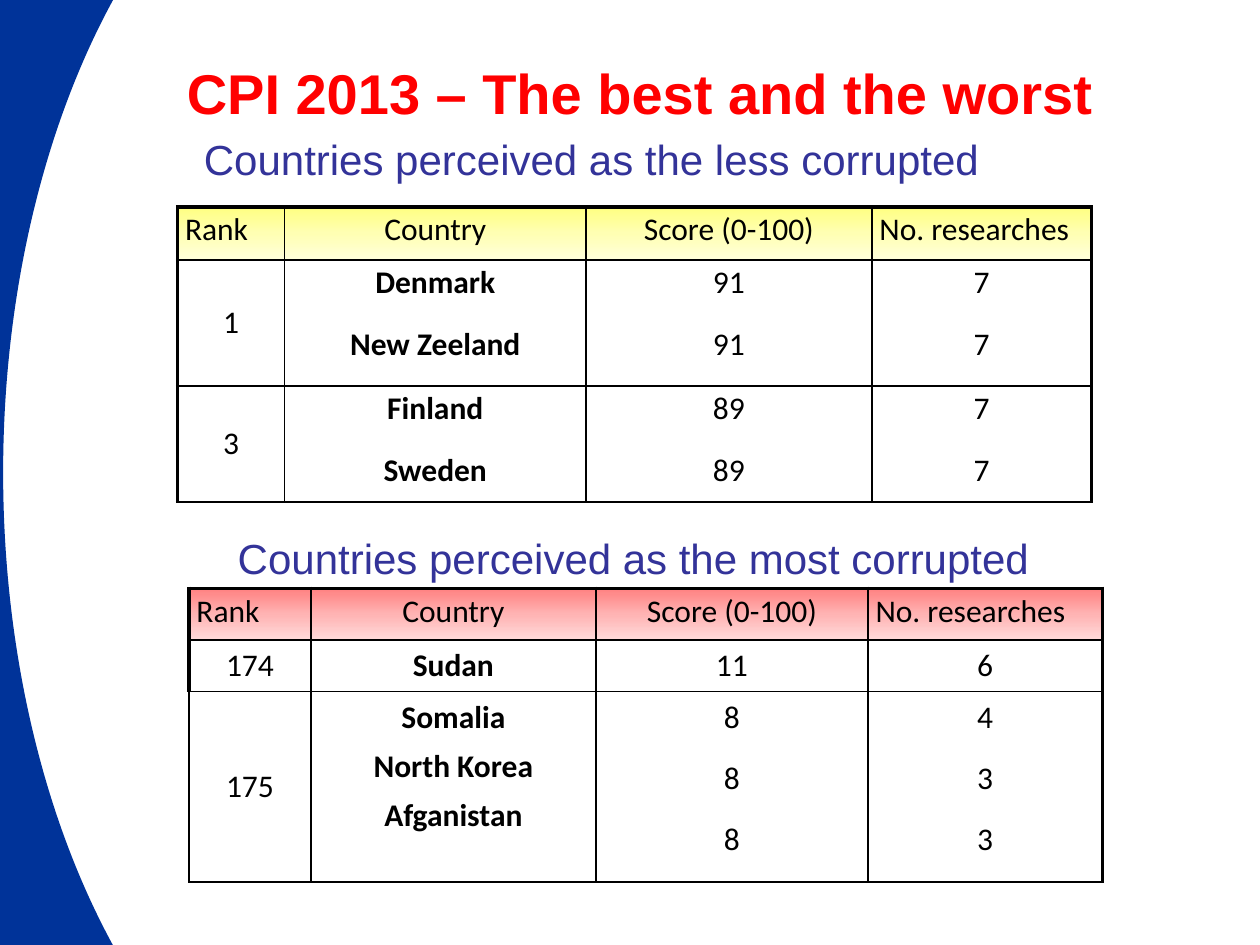
import pptx
import pptx.dml.color
import pptx.enum.shapes
import pptx.enum.text
import pptx.oxml
import pptx.oxml.ns
import pptx.util

Cm = pptx.util.Cm
Pt = pptx.util.Pt
ALIGN = pptx.enum.text.PP_ALIGN
ANCHOR = pptx.enum.text.MSO_ANCHOR
HEADINGS = ["Rank", "Country", "Score (0-100)", "No. researches"]
THIN, THICK = 1, 2.25


def color(hex_string):
    return pptx.dml.color.RGBColor.from_string(hex_string)


def write(frame, text, font="Arial", size=24, ink="333399", bold=False,
          align=ALIGN.CENTER, line=None, after=0):
    for index, words in enumerate(text.split("\n")):
        paragraph = frame.paragraphs[0] if index == 0 else frame.add_paragraph()
        paragraph.alignment = align
        paragraph.space_after = Pt(after)
        if line:
            paragraph.line_spacing = Pt(line)
        run = paragraph.add_run()
        run.text = words
        run.font.name = font
        run.font.size = Pt(size)
        run.font.bold = bold
        run.font.color.rgb = color(ink)


def add_label(slide, text, left, top, width, height, inset=0.25, **style):
    frame = slide.shapes.add_textbox(Cm(left), Cm(top), Cm(width), Cm(height)).text_frame
    frame.word_wrap = True
    frame.vertical_anchor = ANCHOR.MIDDLE
    frame.margin_left = Cm(inset)
    write(frame, text, **style)


def add_side_curve(slide):
    curve = slide.shapes.add_shape(
        pptx.enum.shapes.MSO_SHAPE.MOON, Cm(-3.39), Cm(-1.69), Cm(6.77), Cm(22.44))
    curve.adjustments[0] = 0.51
    curve.shadow.inherit = False
    curve.fill.solid()
    curve.fill.fore_color.rgb = color("003399")
    curve.line.fill.background()


def set_borders(cell, **widths):
    for side in "LRTB":
        width = int(Pt(widths.get(side, THIN)))
        cell._tc.get_or_add_tcPr().append(pptx.oxml.parse_xml(
            f'<a:ln{side} {pptx.oxml.ns.nsdecls("a")} w="{width}"><a:solidFill>'
            f'<a:srgbClr val="000000"/></a:solidFill></a:ln{side}>'))


def set_gradient(cell, shades):
    stops = "".join(f'<a:gs pos="{index * 50000}"><a:srgbClr val="{shade}"/></a:gs>'
                    for index, shade in enumerate(shades))
    cell._tc.get_or_add_tcPr().append(pptx.oxml.parse_xml(
        f'<a:gradFill {pptx.oxml.ns.nsdecls("a")}><a:gsLst>{stops}</a:gsLst>'
        '<a:lin ang="5400000" scaled="0"/></a:gradFill>'))


def set_margins(cell, wide):
    cell.margin_left = cell.margin_right = Cm(0.25 if wide else 0.15)
    cell.margin_top = cell.margin_bottom = Cm(0.13 if wide else 0.08)


def add_ranking(slide, left, top, widths, heights, body, shades,
                body_fill=None, wide_body=False, thick_left_rows=3, name_gap=13):
    rows = [HEADINGS] + body
    ranking = slide.shapes.add_table(
        len(rows), len(widths), Cm(left), Cm(top), Cm(sum(widths)), Cm(sum(heights))).table
    ranking.first_row = ranking.horz_banding = False
    for column, width in zip(ranking.columns, widths):
        column.width = Cm(width)
    for row, height in zip(ranking.rows, heights):
        row.height = Cm(height)
    last = len(widths) - 1
    for r, values in enumerate(rows):
        for c, value in enumerate(values):
            cell = ranking.cell(r, c)
            is_heading, is_country = r == 0, r > 0 and c == 1
            set_margins(cell, wide_body and not is_heading)
            set_borders(cell, L=THICK if c == 0 and r < thick_left_rows else THIN,
                        R=THICK if c == last else THIN,
                        T=THICK if is_heading else THIN)
            if is_heading:
                set_gradient(cell, shades)
            elif body_fill:
                cell.fill.solid()
                cell.fill.fore_color.rgb = color(body_fill)
            else:
                cell.fill.background()
            if c == 0 and not is_heading:
                cell.vertical_anchor = ANCHOR.MIDDLE
            write(cell.text_frame, value, font="Calibri", size=18, ink="000000",
                  bold=is_country, line=22,
                  align=ALIGN.LEFT if is_heading and c in (0, last) else ALIGN.CENTER,
                  after=name_gap if is_country and "\n" in value else 13)


def main():
    """Build the slide with the best and worst ranked countries."""
    deck = pptx.Presentation()
    deck.slide_width, deck.slide_height = Cm(25.4), Cm(19.05)
    slide = deck.slides.add_slide(deck.slide_layouts[6])
    add_side_curve(slide)
    add_label(slide, "CPI 2013 – The best and the worst", 2.11, 0.81, 21.59, 2.11,
              size=32, ink="FF0000", bold=True)
    add_label(slide, "Countries perceived as the most corrupted", 4.17, 10.6, 17.2, 1.27)
    add_label(slide, "Countries perceived as the less corrupted", 3.38, 2.6, 18.8, 1.2,
              inset=0.73, align=ALIGN.LEFT)
    add_ranking(slide, 3.81, 11.86, [2.46, 5.74, 5.49, 4.72], [1.04, 1.04, 3.84],
                [["174", "Sudan", "11", "6"],
                 ["175", "Somalia\nNorth Korea\nAfganistan", "8\n8\n8", "4\n3\n3"]],
                ["FF8080", "FFB3B3", "FFDADA"],
                wide_body=True, thick_left_rows=2, name_gap=6)
    add_ranking(slide, 3.58, 4.17, [2.16, 6.07, 5.77, 4.42], [1.07, 2.54, 2.34],
                [["1", "Denmark\nNew Zeeland", "91\n91", "7\n7"],
                 ["3", "Finland\nSweden", "89\n89", "7\n7"]],
                ["FFFF80", "FFFFB3", "FFFFDA"], body_fill="FFFFFF")
    deck.save("out.pptx")


if __name__ == "__main__":
    main()
